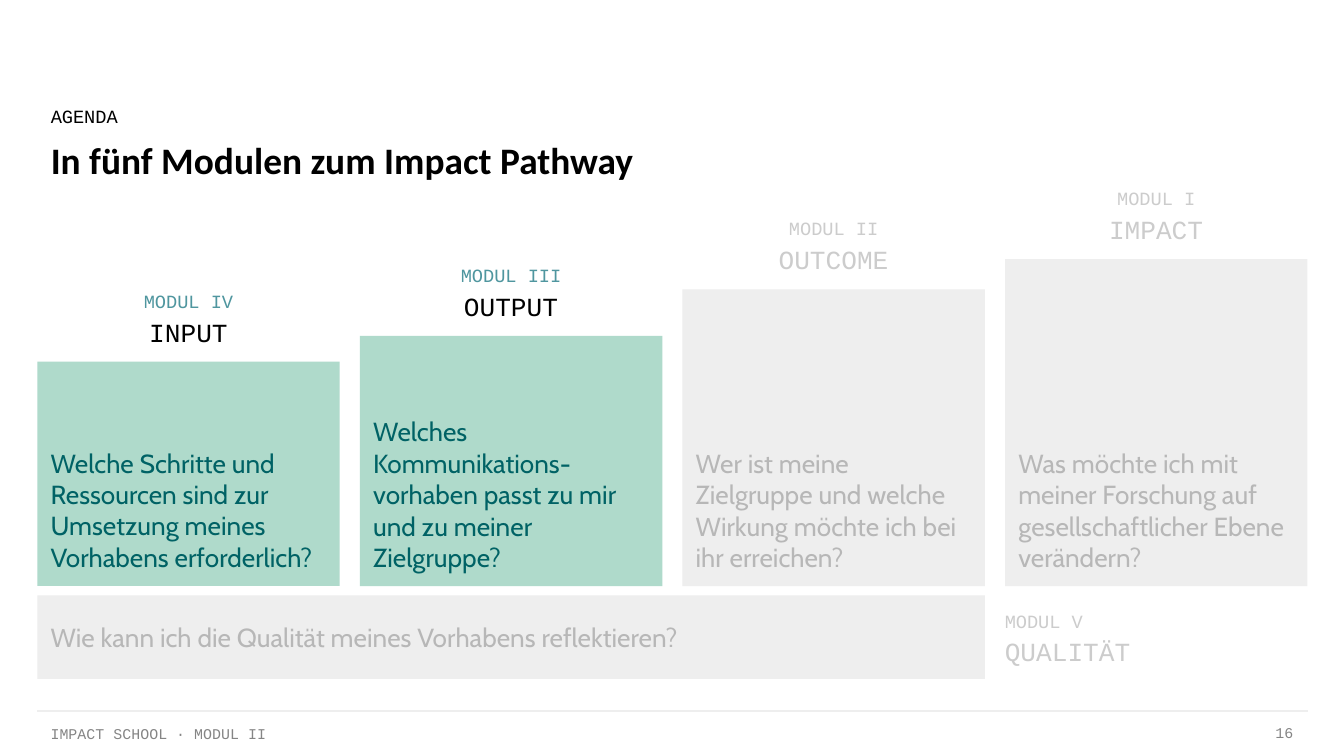
from lxml import etree
from pptx import Presentation
from pptx.dml.color import RGBColor
from pptx.enum import shapes, text
from pptx.oxml import ns
from pptx.util import Pt

MONO, SANS, HEADING = "Courier New", "Cabin", "Calibri"
BLACK, WHITE, PALE, GREY, SILVER = "000000", "FFFFFF", "EEEEEE", "B7B7B7", "CCCCCC"
MINT, TEAL, SEA, FOOT = "AFDACB", "006265", "4F969F", "858585"
LEFT, CENTER, RIGHT = text.PP_ALIGN.LEFT, text.PP_ALIGN.CENTER, text.PP_ALIGN.RIGHT
TOP, MIDDLE, BOTTOM = text.MSO_ANCHOR.TOP, text.MSO_ANCHOR.MIDDLE, text.MSO_ANCHOR.BOTTOM

# Content: module, stage, question, top of the step, active
steps = [
    ("MODUL IV", "INPUT",
     "Welche Schritte und Ressourcen sind zur Umsetzung meines Vorhabens erforderlich?",
     193.8, True),
    ("MODUL III", "OUTPUT",
     "Welches Kommunikations-\nvorhaben passt zu mir und zu meiner Zielgruppe?",
     180, True),
    ("MODUL II", "OUTCOME",
     "Wer ist meine Zielgruppe und welche Wirkung möchte ich bei ihr erreichen?",
     155, False),
    ("MODUL I", "IMPACT",
     "Was möchte ich mit meiner Forschung auf gesellschaftlicher Ebene verändern?",
     138.8, False),
]
quality_question = "Wie kann ich die Qualität meines Vorhabens reflektieren?"

# Layout in points
MARGIN, STEP_WIDTH, PITCH, BASE = 20, 162, 172.8, 314
LABEL_WIDTH, LABEL_HEIGHT, LABEL_GAP = 120, 20, 16.6
FOOTER_TOP, FOOTER_HEIGHT = 381, 24.5

deck = Presentation()
deck.slide_width, deck.slide_height = Pt(720), Pt(405)
slide = deck.slides.add_slide(deck.slide_layouts[0])


def color(value):
    return RGBColor.from_string(value)


def write(content, box, holder=None, fill=None, size=14, font=SANS, ink=BLACK,
          bold=False, align=LEFT, anchor=MIDDLE, spacing=1.0, after=0):
    """Put text in a placeholder, a filled rectangle or a text box."""
    place = [Pt(length) for length in box]
    if holder is not None:
        holder.left, holder.top, holder.width, holder.height = place
    elif fill:
        holder = slide.shapes.add_shape(shapes.MSO_SHAPE.RECTANGLE, *place)
        holder.shadow.inherit = False
        holder.fill.solid()
        holder.fill.fore_color.rgb = color(fill)
        holder.line.fill.background()
    else:
        holder = slide.shapes.add_textbox(*place)
    frame = holder.text_frame
    frame.word_wrap = True
    frame.auto_size = text.MSO_AUTO_SIZE.NONE
    frame.vertical_anchor = anchor
    frame.margin_left = frame.margin_right = Pt(7.2)
    frame.margin_top = frame.margin_bottom = Pt(7.2)
    paragraph = frame.paragraphs[0]
    paragraph.text = content.replace("\n", "\v")
    paragraph.alignment = align
    paragraph.line_spacing = spacing
    paragraph.space_before, paragraph.space_after = Pt(0), Pt(after)
    for run in paragraph.runs:
        run.font.size, run.font.name, run.font.bold = Pt(size), font, bold
        run.font.color.rgb = color(ink)


# Footer
write("IMPACT SCHOOL · MODUL II", (MARGIN, FOOTER_TOP, 454, FOOTER_HEIGHT),
      size=8, font=MONO, ink=FOOT, anchor=TOP)
write("16", (669, FOOTER_TOP, 31, FOOTER_HEIGHT),
      size=8, font=MONO, ink=FOOT, align=RIGHT, spacing=0.8)
footer_rule = slide.shapes.add_connector(
    shapes.MSO_CONNECTOR.STRAIGHT, Pt(MARGIN), Pt(FOOTER_TOP), Pt(700.5), Pt(FOOTER_TOP))
footer_rule.line.color.rgb = color(PALE)
footer_rule.line.width = Pt(0.75)
etree.SubElement(footer_rule._element.spPr, ns.qn("a:effectLst"))

# Heading
title, kicker = slide.placeholders
write("AGENDA", (MARGIN, 54.7, 559.4, 14.4), kicker, size=10, font=MONO)
write("In fünf Modulen zum Impact Pathway", (MARGIN, 66.2, 559.4, 37.4), title,
      size=20, font=HEADING, bold=True, anchor=TOP)

# Steps with their labels centred above
for index, (module, stage, question, top, active) in enumerate(steps):
    left = MARGIN + index * PITCH
    write(question, (left, top, STEP_WIDTH, BASE - top), fill=MINT if active else PALE,
          ink=TEAL if active else GREY, anchor=BOTTOM, after=6 if active else 0)
    label_left = left + (STEP_WIDTH - LABEL_WIDTH) / 2
    stage_top = top - 26
    write(stage, (label_left, stage_top, LABEL_WIDTH, LABEL_HEIGHT), font=MONO,
          ink=BLACK if active else SILVER, align=CENTER)
    write(module, (label_left, stage_top - LABEL_GAP, LABEL_WIDTH, LABEL_HEIGHT), size=10,
          font=MONO, ink=SEA if active else SILVER, align=CENTER)

# Quality bar under the first three steps, labelled on its right
quality_left = MARGIN + 3 * PITCH - 7.2
write("QUALITÄT", (quality_left, 333.4, 88, 26.6), fill=WHITE, font=MONO, ink=SILVER, anchor=TOP)
write(quality_question, (MARGIN, 319, 2 * PITCH + STEP_WIDTH, 44.8), fill=PALE, ink=GREY)
write("MODUL V", (quality_left, 322.6, 72, LABEL_HEIGHT), size=10, font=MONO, ink=SILVER)

deck.save("out.pptx")
